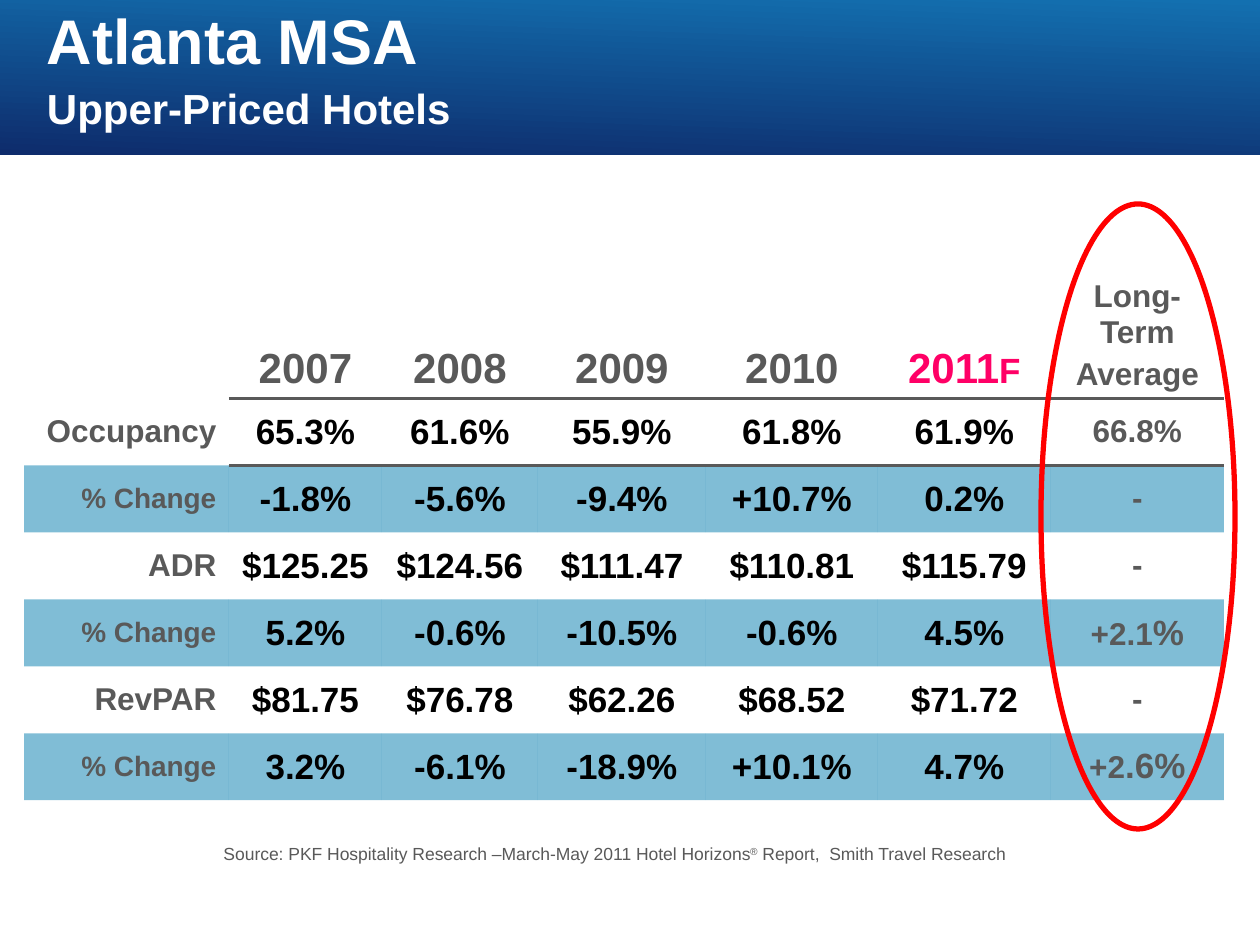
"""Builds the Atlanta MSA upper-priced hotels slide."""
from lxml.etree import SubElement
from pptx import Presentation
from pptx.dml.color import RGBColor
from pptx.enum.shapes import MSO_SHAPE
from pptx.enum.text import MSO_ANCHOR, PP_ALIGN
from pptx.oxml import parse_xml
from pptx.oxml.ns import nsdecls, qn
from pptx.util import Emu, Pt

PX = 914400 // 126
FONT = "Arial"
NO_STYLE = "{2D5ABB26-0587-4C30-8999-92F81FD0307C}"
COLORS = {"navy": "0E2C6C", "blue": "1370B0", "band": "027DAE", "gray": "595959",
          "pink": "FF0066", "red": "FF0000", "black": "000000", "white": "FFFFFF"}
COL_WIDTHS = [205, 153, 156, 168, 172, 173, 173]
HEADER_H, ROW_H = 125, 67
YEARS = ["2007", "2008", "2009", "2010"]
ROWS = [
    ("Occupancy", ["65.3%", "61.6%", "55.9%", "61.8%", "61.9%"], [("66.8%", 18)]),
    ("% Change", ["-1.8%", "-5.6%", "-9.4%", "+10.7%", "0.2%"], [("-", 18)]),
    ("ADR", ["$125.25", "$124.56", "$111.47", "$110.81", "$115.79"], [("-", 18)]),
    ("% Change", ["5.2%", "-0.6%", "-10.5%", "-0.6%", "4.5%"], [("+2.1", 18), ("%", 20)]),
    ("RevPAR", ["$81.75", "$76.78", "$62.26", "$68.52", "$71.72"], [("-", 18)]),
    ("% Change", ["3.2%", "-6.1%", "-18.9%", "+10.1%", "4.7%"], [("+2", 18), (".6%", 20)]),
]


def px(*values):
    """Turn pixel lengths into EMU."""
    return [Emu(v * PX) for v in values]


def rgb(name):
    """Look up a named colour."""
    return RGBColor.from_string(COLORS[name])


def set_font(p, color, bold=True, align=PP_ALIGN.CENTER):
    """Style a whole paragraph."""
    p.alignment = align
    p.font.name, p.font.bold = FONT, bold
    p.font.color.rgb = rgb(color)


def add_runs(p, runs):
    """Append (text, size) runs to a paragraph."""
    for text, size in runs:
        r = p.add_run()
        r.text, r.font.size = text, Pt(size)


def fill_cell(cell, runs, color="gray", align=PP_ALIGN.CENTER, anchor=MSO_ANCHOR.MIDDLE):
    """Write runs into a table cell."""
    cell.vertical_anchor = anchor
    p = cell.text_frame.paragraphs[0]
    set_font(p, color, align=align)
    add_runs(p, runs)


def shade(cell, banded):
    """Give a cell the half-transparent band or no fill."""
    if not banded:
        cell.fill.background()
        return
    cell.fill.solid()
    cell.fill.fore_color.rgb = rgb("band")
    clr = cell._tc.tcPr.find(".//" + qn("a:srgbClr"))
    SubElement(clr, qn("a:alpha"), val="50000")


def add_rule(cell, side):
    """Draw a gray rule on one side of a cell."""
    cell._tc.get_or_add_tcPr().insert(0, parse_xml(
        f'<a:{side} {nsdecls("a")} w="28575"><a:solidFill>'
        f'<a:srgbClr val="{COLORS["gray"]}"/></a:solidFill></a:{side}>'))


def add_banner(slide):
    """Add the gradient band across the top."""
    sp = slide.shapes.add_shape(MSO_SHAPE.RECTANGLE, *px(0, 0, 1260, 155))
    sp.shadow.inherit = False
    sp.line.fill.background()
    sp.fill.gradient()
    sp.fill.gradient_angle = 88
    for stop, name, pos in zip(sp.fill.gradient_stops, ("navy", "blue"), (0, 1)):
        stop.color.rgb, stop.position = rgb(name), pos


def add_box(slide, *at):
    """Add a wrapping text box and return its frame."""
    tf = slide.shapes.add_textbox(*px(*at)).text_frame
    tf.word_wrap = True
    return tf


def add_title(slide):
    """Add the two-line title."""
    tf = add_box(slide, 47, 21, 1022, 112)
    tf.margin_left = tf.margin_right = tf.margin_top = tf.margin_bottom = 0
    tf.vertical_anchor = MSO_ANCHOR.BOTTOM
    p = tf.paragraphs[0]
    p.line_spacing = 1.1
    set_font(p, "white", align=PP_ALIGN.LEFT)
    add_runs(p, [("Atlanta MSA", 36)])
    p.add_line_break()
    add_runs(p, [("Upper-Priced Hotels", 24)])


def add_header(cells):
    """Fill the header row of the table."""
    bottom = MSO_ANCHOR.BOTTOM
    for cell, year in zip(cells[1:], YEARS):
        fill_cell(cell, [(year, 24)], anchor=bottom)
    fill_cell(cells[5], [("2011", 24), ("F", 20)], "pink", anchor=bottom)
    fill_cell(cells[6], [("Long-Term", 18)], anchor=bottom)
    p = cells[6].text_frame.add_paragraph()
    p.space_before = Pt(4)
    set_font(p, "gray")
    add_runs(p, [("Average", 18)])


def add_metrics(slide):
    """Add the table of hotel metrics."""
    height = HEADER_H + ROW_H * len(ROWS)
    frame = slide.shapes.add_table(len(ROWS) + 1, len(COL_WIDTHS),
                                   *px(24, 273, sum(COL_WIDTHS), height))
    table = frame.table
    table.first_row = table.horz_banding = False
    table._tbl.tblPr.find(qn("a:tableStyleId")).text = NO_STYLE
    for col, width in zip(table.columns, px(*COL_WIDTHS)):
        col.width = width
    grid = [list(row.cells) for row in table.rows]
    for i, row in enumerate(table.rows):
        row.height = px(ROW_H if i else HEADER_H)[0]
        for cell in grid[i]:
            shade(cell, i and i % 2 == 0)
    add_header(grid[0])
    for cells, (label, values, average) in zip(grid[1:], ROWS):
        size = 16 if label == "% Change" else 18
        fill_cell(cells[0], [(label, size)], align=PP_ALIGN.RIGHT)
        for cell, value in zip(cells[1:], values):
            cell.margin_left = cell.margin_right = cell.margin_top = px(1)[0]
            cell.margin_bottom = 0
            fill_cell(cell, [(value, 20)], "black")
        fill_cell(cells[6], average)
    for above, below in zip(grid[0][1:], grid[1][1:]):
        add_rule(above, "lnB")
        add_rule(below, "lnT")


def add_highlight(slide):
    """Circle the long-term average column."""
    sp = slide.shapes.add_shape(MSO_SHAPE.OVAL, *px(1041, 204, 194, 625))
    sp.shadow.inherit = False
    sp.fill.background()
    sp.line.color.rgb, sp.line.width = rgb("red"), Pt(3)


def add_source(slide):
    """Add the source line."""
    p = add_box(slide, 55, 837, 1124, 34).paragraphs[0]
    set_font(p, "gray", bold=False)
    add_runs(p, [("Source: PKF Hospitality Research –March-May 2011 Hotel Horizons", 10),
                 ("®", 10), (" Report,  Smith Travel Research ", 10)])
    p.runs[1].font._element.set("baseline", "30000")


def main():
    """Build and save the slide."""
    prs = Presentation()
    prs.slide_width, prs.slide_height = px(1260, 945)
    slide = prs.slides.add_slide(prs.slide_layouts[6])
    add_banner(slide)
    add_metrics(slide)
    add_title(slide)
    add_highlight(slide)
    add_source(slide)
    prs.save("out.pptx")


if __name__ == "__main__":
    main()
